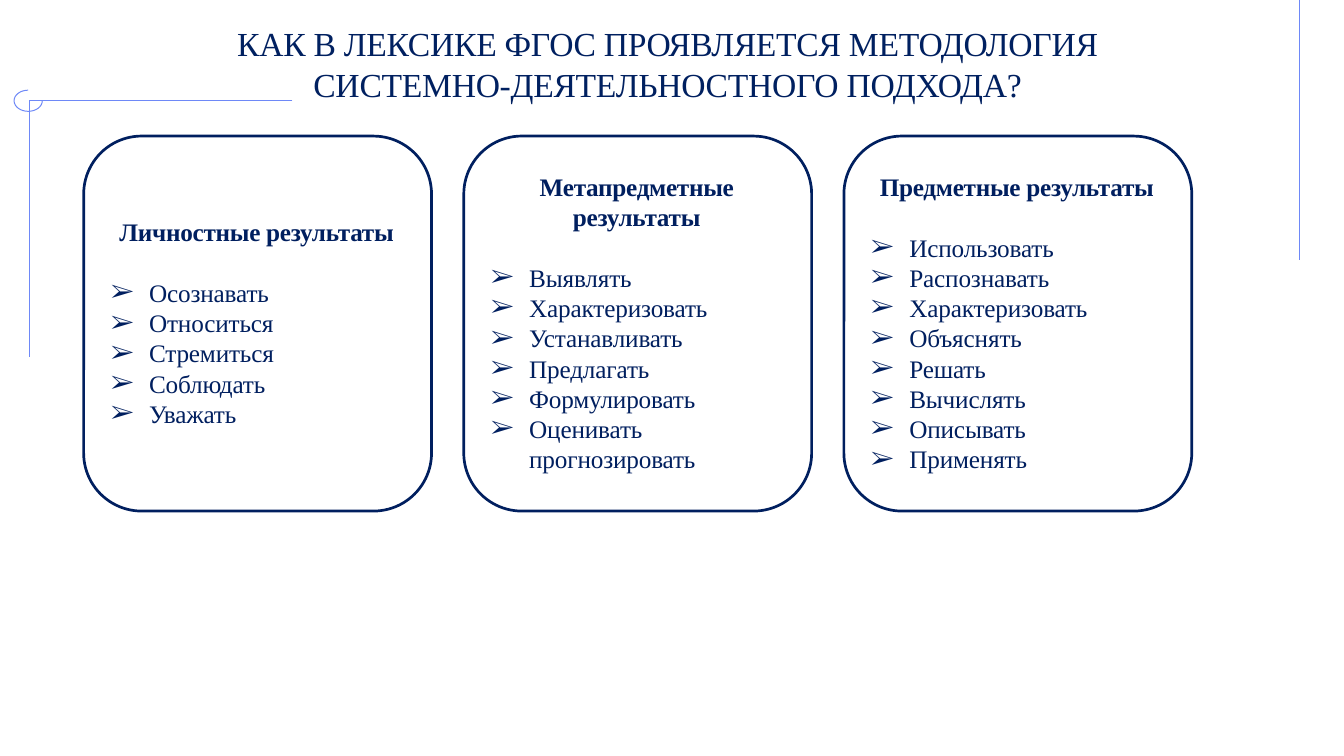
from dataclasses import dataclass
from math import cos, pi, sin

from lxml import etree
from pptx import Presentation
from pptx.dml.color import RGBColor
from pptx.enum.shapes import MSO_CONNECTOR, MSO_SHAPE
from pptx.enum.text import MSO_ANCHOR, MSO_AUTO_SIZE, PP_ALIGN
from pptx.oxml.ns import qn
from pptx.util import Inches, Pt

STRAIGHT = MSO_CONNECTOR.STRAIGHT
ROUNDED = MSO_SHAPE.ROUNDED_RECTANGLE
TOP, MIDDLE = MSO_ANCHOR.TOP, MSO_ANCHOR.MIDDLE
LEFT, CENTER = PP_ALIGN.LEFT, PP_ALIGN.CENTER
TITLE_ONLY = 5


@dataclass(frozen=True)
class Theme:
    font: str = "Times New Roman"
    title_color: RGBColor = RGBColor(0x00, 0x20, 0x60)
    card_color: RGBColor = RGBColor(0x00, 0x1F, 0x5F)
    accent: RGBColor = RGBColor(0x6E, 0x88, 0xF7)
    title_size: Pt = Pt(24)
    body_size: Pt = Pt(18)
    line_pitch: Pt = Pt(21.6)
    card_line: Pt = Pt(1.92)
    thin_line: Pt = Pt(0.72)
    heading_tracking: int = -20  # hundredths of a point
    list_tracking: int = -10


THEME = Theme()

TITLE_LINES = [
    "КАК В ЛЕКСИКЕ ФГОС ПРОЯВЛЯЕТСЯ МЕТОДОЛОГИЯ",
    "СИСТЕМНО-ДЕЯТЕЛЬНОСТНОГО ПОДХОДА?",
]
CARDS = [
    ("Личностные результаты",
     ["Осознавать", "Относиться", "Стремиться", "Соблюдать", "Уважать"]),
    ("Метапредметные результаты",
     ["Выявлять", "Характеризовать", "Устанавливать", "Предлагать",
      "Формулировать", "Оценивать\vпрогнозировать"]),
    ("Предметные результаты",
     ["Использовать", "Распознавать", "Характеризовать", "Объяснять",
      "Решать", "Вычислять", "Описывать", "Применять"]),
]


def set_margins(frame, left, top, right, bottom):
    frame.margin_left, frame.margin_top = Inches(left), Inches(top)
    frame.margin_right, frame.margin_bottom = Inches(right), Inches(bottom)


def style_text(paragraph, size, color, alignment, tracking, bold=False):
    paragraph.alignment = alignment
    paragraph.font.name = THEME.font
    paragraph.font.size = size
    paragraph.font.color.rgb = color
    paragraph.font.bold = bold
    for run in paragraph.runs:
        run._r.get_or_add_rPr().set("spc", str(tracking))


def add_bullet(paragraph):
    properties = paragraph._p.get_or_add_pPr()
    properties.set("marL", str(Inches(0.39)))
    properties.set("indent", str(-Inches(0.38)))
    etree.SubElement(properties, qn("a:buFont")).set("typeface", THEME.font)
    etree.SubElement(properties, qn("a:buChar")).set("char", "➢")


def add_edge_line(slide, x, top, bottom):
    line = slide.shapes.add_connector(
        STRAIGHT, Inches(x), Inches(top), Inches(x), Inches(bottom))
    line.line.color.rgb = THEME.accent
    line.line.width = THEME.thin_line
    etree.SubElement(line._element.spPr, qn("a:effectLst"))


def add_corner_mark(slide, x, y, across, down):
    """Two lines that meet at (x, y), with a three-quarter ring around it."""
    steps = 24
    angles = [-pi / 2 - 1.5 * pi * step / steps for step in range(steps + 1)]
    ring = [(x - 0.01 + 0.14 * cos(angle), y + 0.105 * sin(angle))
            for angle in angles]
    strokes = [[(x + across, y), (x, y)], [(x, y), (x, y + down)], ring]
    strokes = [[(Inches(px), Inches(py)) for px, py in stroke]
               for stroke in strokes]
    builder = slide.shapes.build_freeform(*strokes[0][0])
    for index, (start, *rest) in enumerate(strokes):
        if index:
            builder.move_to(*start)
        builder.add_line_segments(rest, close=False)
    mark = builder.convert_to_shape()
    mark.shadow.inherit = False
    mark.fill.background()
    mark.line.color.rgb = THEME.accent
    mark.line.width = THEME.thin_line


def fill_title(title, left, top, width, height):
    title.left, title.top = Inches(left), Inches(top)
    title.width, title.height = Inches(width), Inches(height)
    frame = title.text_frame
    frame.text = "\n".join(TITLE_LINES)
    frame.auto_size = MSO_AUTO_SIZE.NONE
    frame.vertical_anchor = TOP
    set_margins(frame, 0, 0.02, 0, 0)
    for paragraph in frame.paragraphs:
        paragraph.space_before = Pt(0)
        style_text(paragraph, THEME.title_size, THEME.title_color, CENTER,
                   THEME.heading_tracking)


def add_card(slide, left, top, width, height, heading, verbs):
    card = slide.shapes.add_shape(
        ROUNDED, Inches(left), Inches(top), Inches(width), Inches(height))
    card.shadow.inherit = False
    card.fill.background()
    card.line.color.rgb = THEME.card_color
    card.line.width = THEME.card_line
    frame = card.text_frame
    frame.word_wrap = True
    frame.vertical_anchor = MIDDLE
    set_margins(frame, 0.09, 0, 0.11, 0.02)
    frame.text = heading
    title = frame.paragraphs[0]
    style_text(title, THEME.body_size, THEME.card_color, CENTER,
               THEME.heading_tracking, bold=True)
    title.line_spacing = title.space_after = THEME.line_pitch
    for verb in verbs:
        paragraph = frame.add_paragraph()
        paragraph.text = verb
        paragraph.line_spacing = THEME.line_pitch
        add_bullet(paragraph)
        style_text(paragraph, THEME.body_size, THEME.card_color, LEFT,
                   THEME.list_tracking)


def add_cards(slide, left, top, width, height, gap):
    card_width = (width - gap * (len(CARDS) - 1)) / len(CARDS)
    for index, (heading, verbs) in enumerate(CARDS):
        add_card(slide, left + index * (card_width + gap), top,
                 card_width, height, heading, verbs)


def main():
    presentation = Presentation()
    presentation.slide_width = Inches(13.33)
    presentation.slide_height = Inches(7.5)
    slide = presentation.slides.add_slide(
        presentation.slide_layouts[TITLE_ONLY])
    add_edge_line(slide, 12.89, 0, 2.58)
    add_corner_mark(slide, 0.29, 1, across=2.61, down=2.54)
    fill_title(slide.shapes.title, 2.12, 0.21, 9, 0.83)
    add_cards(slide, 0.83, 1.35, 10.99, 3.72, gap=0.32)
    presentation.save("out.pptx")


if __name__ == "__main__":
    main()
